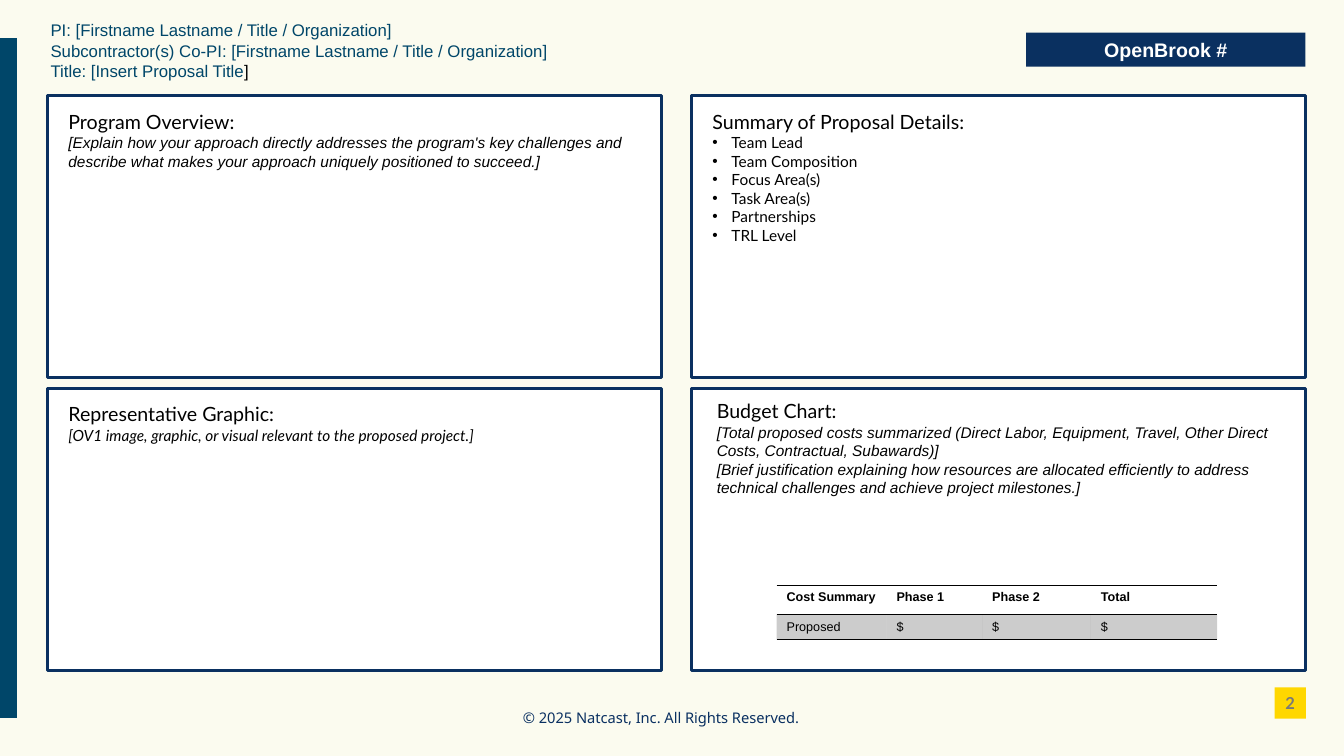
from dataclasses import dataclass

from lxml.etree import SubElement
from pptx import Presentation
from pptx.dml.color import RGBColor
from pptx.enum.shapes import MSO_SHAPE
from pptx.enum.text import MSO_ANCHOR, MSO_AUTO_SIZE, PP_ALIGN
from pptx.oxml.ns import qn
from pptx.util import Cm, Pt


@dataclass(frozen=True)
class Theme:
    cream: str = "FBFBEF"
    white: str = "FFFFFF"
    black: str = "000000"
    teal: str = "004669"
    navy: str = "0A3060"
    footer_navy: str = "0A3061"
    yellow: str = "FFD700"
    grey: str = "797979"
    sans: str = "Arial"
    heading_font: str = "Lato"
    footer_font: str = "Noto Sans"
    heading: float = 14
    header: float = 12
    page: float = 11.8
    body: float = 11
    footer: float = 10.5
    table: float = 9


THEME = Theme()
NO_STYLE_NO_GRID = "{2D5ABB26-0587-4C30-8999-92F81FD0307C}"
PANEL_LEFTS = (1.19, 17.42)
PANEL_TOPS = (2.41, 9.78)
PANEL_SIZE = (15.49, 7.11)
BULLET_INDENT = 0.48

# Left, top, heading, lines, font of the lines, bulleted
SECTIONS = [
    (1.47, 2.64, "Program Overview:",
     ["[Explain how your approach directly addresses the program's key challenges and "
      "describe what makes your approach uniquely positioned to succeed.]"],
     THEME.sans, False),
    (17.7, 2.64, "Summary of Proposal Details:",
     ["Team Lead", "Team Composition", "Focus Area(s)", "Task Area(s)", "Partnerships",
      "TRL Level"],
     THEME.heading_font, True),
    (1.47, 10.01, "Representative Graphic:",
     ["[OV1 image, graphic, or visual relevant to the proposed project.]"],
     THEME.heading_font, False),
    (17.81, 9.93, "Budget Chart:",
     ["[Total proposed costs summarized (Direct Labor, Equipment, Travel, Other Direct "
      "Costs, Contractual, Subawards)]",
      "[Brief justification explaining how resources are allocated efficiently to address "
      "technical challenges and achieve project milestones.]"],
     THEME.sans, False),
]
HEADER_LINES = [
    "PI: [Firstname Lastname / Title / Organization]",
    "Subcontractor(s) Co-PI: [Firstname Lastname / Title / Organization]",
    "Title: [Insert Proposal Title",
]
COSTS = [["Cost Summary", "Phase 1", "Phase 2", "Total"], ["Proposed", "$", "$", "$"]]
COST_WIDTHS = (2.77, 2.41, 2.74, 3.18)
COST_HEIGHTS = (0.74, 0.62)


def rgb(value):
    return RGBColor.from_string(value)


def style(paragraph, font_name, size, color, bold=False, italic=False):
    font = paragraph.font
    font.name, font.size, font.bold, font.italic = font_name, Pt(size), bold, italic
    font.color.rgb = rgb(color)


def set_bullet(paragraph, bulleted):
    """Give the paragraph a hanging bullet, or remove the inherited one."""
    properties = paragraph._p.get_or_add_pPr()
    indent = Cm(BULLET_INDENT) if bulleted else 0
    properties.set("marL", str(indent))
    properties.set("indent", str(-indent))
    if bulleted:
        SubElement(properties, qn("a:buFont"), typeface="Arial")
        SubElement(properties, qn("a:buChar"), char="•")
    else:
        SubElement(properties, qn("a:buNone"))


def add_block(slide, left, top, width, height, fill, outline=None):
    block = slide.shapes.add_shape(
        MSO_SHAPE.RECTANGLE, Cm(left), Cm(top), Cm(width), Cm(height))
    block.shadow.inherit = False
    block.fill.solid()
    block.fill.fore_color.rgb = rgb(fill)
    if outline:
        block.line.color.rgb = rgb(outline)
        block.line.width = Pt(2.25)
    else:
        block.line.fill.background()
    return block


def place(placeholder, left, top, width, height):
    """Position a placeholder in front of the panels and return its text frame."""
    placeholder.left, placeholder.top = Cm(left), Cm(top)
    placeholder.width, placeholder.height = Cm(width), Cm(height)
    placeholder.element.getparent().append(placeholder.element)
    frame = placeholder.text_frame
    frame.word_wrap = True
    frame.auto_size = MSO_AUTO_SIZE.NONE
    frame.vertical_anchor = MSO_ANCHOR.TOP
    return frame


def fill_header(title):
    frame = place(title, 1.02, 0.38, 22.96, 1.8)
    frame.text = "\n".join(HEADER_LINES)
    for line in frame.paragraphs:
        line.alignment = PP_ALIGN.LEFT
        style(line, THEME.sans, THEME.header, THEME.teal)
    closing_bracket = frame.paragraphs[-1].add_run()
    closing_bracket.text = "]"
    closing_bracket.font.color.rgb = rgb(THEME.black)


def fill_section(placeholder, left, top, heading, lines, font_name, bulleted):
    frame = place(placeholder, left, top, 14.68, 4.2)
    frame.text = "\n".join([heading, *lines])
    for number, paragraph in enumerate(frame.paragraphs):
        is_line = number > 0
        set_bullet(paragraph, bulleted and is_line)
        paragraph.space_before = Pt(0)
        if is_line:
            style(paragraph, font_name, THEME.body, THEME.black, italic=not bulleted)
        else:
            style(paragraph, THEME.heading_font, THEME.heading, THEME.black)


def add_border(cell, side):
    border = SubElement(cell._tc.get_or_add_tcPr(), qn(f"a:{side}"), w=str(Pt(1)))
    SubElement(SubElement(border, qn("a:solidFill")), qn("a:srgbClr"), val=THEME.black)


def shade(cell, percent):
    cell.fill.solid()
    cell.fill.fore_color.rgb = rgb(THEME.black)
    color = cell._tc.tcPr.find(qn("a:solidFill"))[0]
    SubElement(color, qn("a:alpha"), val=str(percent * 1000))


def add_cost_table(slide):
    table = slide.shapes.add_table(
        len(COSTS), len(COST_WIDTHS), Cm(19.57), Cm(14.75),
        Cm(sum(COST_WIDTHS)), Cm(sum(COST_HEIGHTS))).table
    table._tbl.tblPr.find(qn("a:tableStyleId")).text = NO_STYLE_NO_GRID
    table.horz_banding = False
    for column, width in zip(table.columns, COST_WIDTHS):
        column.width = Cm(width)
    for number, (row, height, values) in enumerate(zip(table.rows, COST_HEIGHTS, COSTS)):
        row.height = Cm(height)
        is_header = number == 0
        for cell, value in zip(row.cells, values):
            cell.text = value
            style(cell.text_frame.paragraphs[0], THEME.sans, THEME.table, THEME.black,
                  bold=is_header)
            if is_header:
                add_border(cell, "lnT")
            add_border(cell, "lnB")
            if is_header:
                cell.fill.background()
            else:
                shade(cell, 20)


def add_label(block, text, font_name, size, color):
    frame = block.text_frame
    frame.margin_left = frame.margin_right = frame.margin_top = frame.margin_bottom = 0
    frame.vertical_anchor = MSO_ANCHOR.MIDDLE
    frame.text = text
    frame.paragraphs[0].alignment = PP_ALIGN.CENTER
    style(frame.paragraphs[0], font_name, size, color, bold=True)


def add_copyright(slide):
    frame = slide.shapes.add_textbox(Cm(12.93), Cm(17.73), Cm(8.03), Cm(0.71)).text_frame
    frame.word_wrap = False
    frame.text = "© 2025 Natcast, Inc. All Rights Reserved."
    style(frame.paragraphs[0], THEME.footer_font, THEME.footer, THEME.footer_navy)


def main():
    presentation = Presentation()
    presentation.slide_width, presentation.slide_height = Cm(33.87), Cm(19.05)
    comparison_layout = presentation.slide_layouts[4]
    slide = presentation.slides.add_slide(comparison_layout)
    slide.background.fill.solid()
    slide.background.fill.fore_color.rgb = rgb(THEME.cream)

    add_block(slide, 0, 0.96, 0.43, 17.13, THEME.teal)
    for top in PANEL_TOPS:
        for left in PANEL_LEFTS:
            add_block(slide, left, top, *PANEL_SIZE, THEME.white, THEME.navy)

    fill_header(slide.shapes.title)
    for number, section in enumerate(SECTIONS, start=1):
        fill_section(slide.placeholders[number], *section)
    add_cost_table(slide)

    proposal_number = add_block(slide, 25.86, 0.82, 7.04, 0.86, THEME.navy)
    add_label(proposal_number, "OpenBrook #", THEME.sans, THEME.heading, THEME.white)
    page_number = add_block(slide, 32.12, 17.32, 0.79, 0.79, THEME.yellow)
    add_label(page_number, "2", THEME.heading_font, THEME.page, THEME.grey)
    add_copyright(slide)
    presentation.save("out.pptx")


if __name__ == "__main__":
    main()
